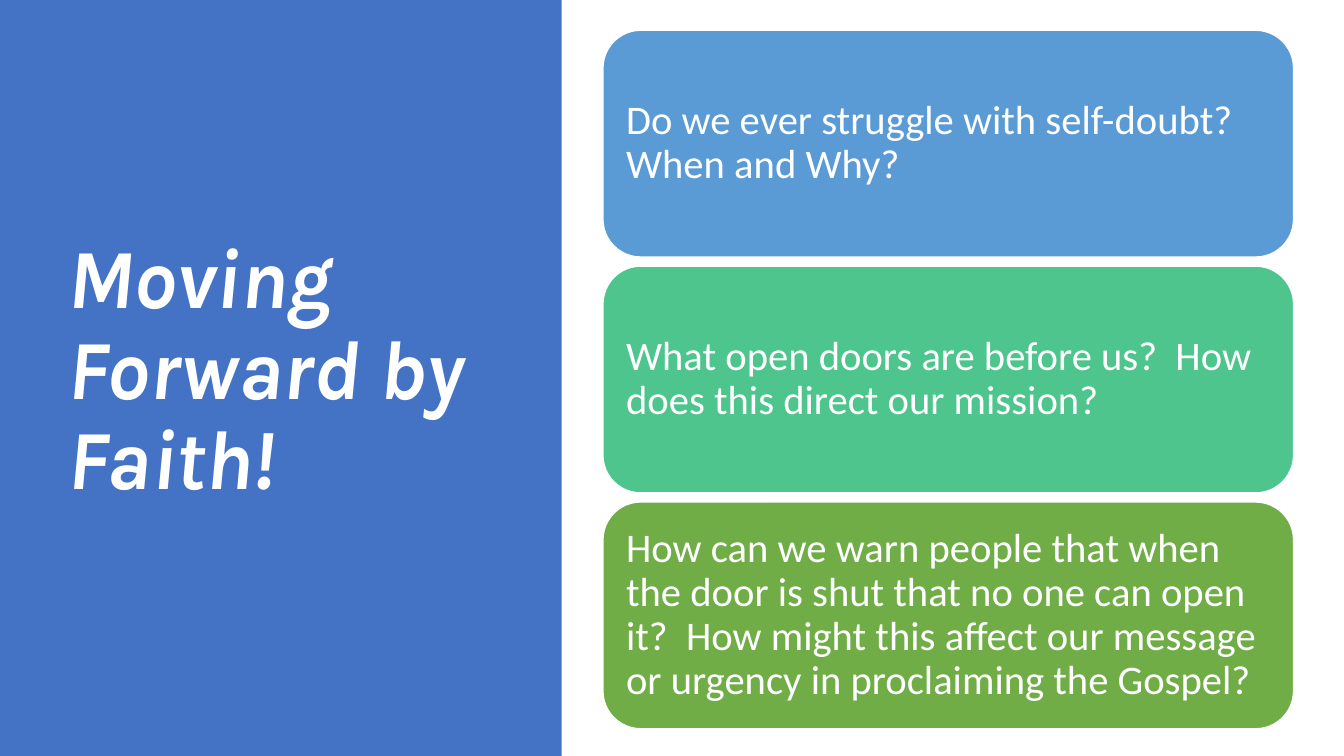
import dataclasses

import pptx
import pptx.dml.color
import pptx.enum.shapes
import pptx.enum.text
import pptx.util

EMU_PER_PX = 9144
WHITE = "FFFFFF"
SHAPES = pptx.enum.shapes.MSO_SHAPE


@dataclasses.dataclass(frozen=True)
class Question:
    text: str
    fill: str


QUESTIONS = [
    Question("Do we ever struggle with self-doubt?  When and Why?", "5B9BD5"),
    Question("What open doors are before us?  How does this direct our mission?", "4DC58D"),
    Question(
        "How can we warn people that when the door is shut that no one can open it?  "
        "How might this affect our message or urgency in proclaiming the Gospel?",
        "70AD47",
    ),
]
CARD_LEFT, CARD_TOP, CARD_WIDTH, CARD_HEIGHT = 598, 30, 685, 225
CARD_PITCH = 234
CARD_INSET = 12


def px(length: int) -> pptx.util.Emu:
    return pptx.util.Emu(length * EMU_PER_PX)


def rgb(value: str) -> pptx.dml.color.RGBColor:
    return pptx.dml.color.RGBColor.from_string(value)


def add_panel(slide, kind, left: int, top: int, width: int, height: int, fill: str):
    panel = slide.shapes.add_shape(kind, px(left), px(top), px(width), px(height))
    panel.shadow.inherit = False
    panel.fill.solid()
    panel.fill.fore_color.rgb = rgb(fill)
    panel.line.fill.background()
    return panel


def write(frame, text: str, font: str, size: int, emphasis: bool = False) -> None:
    frame.word_wrap = True
    frame.vertical_anchor = pptx.enum.text.MSO_ANCHOR.MIDDLE
    paragraph = frame.paragraphs[0]
    paragraph.alignment = pptx.enum.text.PP_ALIGN.LEFT
    paragraph.line_spacing = 0.9
    run = paragraph.add_run()
    run.text = text
    run.font.name = font
    run.font.size = pptx.util.Pt(size)
    run.font.bold = run.font.italic = emphasis
    run.font.color.rgb = rgb(WHITE)


def add_question(slide, question: Question, top: int) -> None:
    card = add_panel(slide, SHAPES.ROUNDED_RECTANGLE, CARD_LEFT, top,
                     CARD_WIDTH, CARD_HEIGHT, question.fill)
    card.line.color.rgb = rgb(WHITE)
    card.line.width = pptx.util.Pt(1)
    frame = card.text_frame
    frame.margin_left = frame.margin_right = px(CARD_INSET)
    frame.margin_top = frame.margin_bottom = px(CARD_INSET)
    write(frame, question.text, "Calibri", 29)


def main() -> None:
    deck = pptx.Presentation()
    deck.slide_width, deck.slide_height = px(1333), px(750)
    slide = deck.slides.add_slide(deck.slide_layouts[6])

    add_panel(slide, SHAPES.RECTANGLE, 0, 0, 557, 750, "4472C4")
    title = slide.shapes.add_textbox(px(57), px(68), px(416), px(602))
    write(title.text_frame, "Moving Forward by Faith!", "Karla", 60, emphasis=True)

    for index, question in enumerate(QUESTIONS):
        add_question(slide, question, CARD_TOP + index * CARD_PITCH)

    deck.save("out.pptx")


if __name__ == "__main__":
    main()
